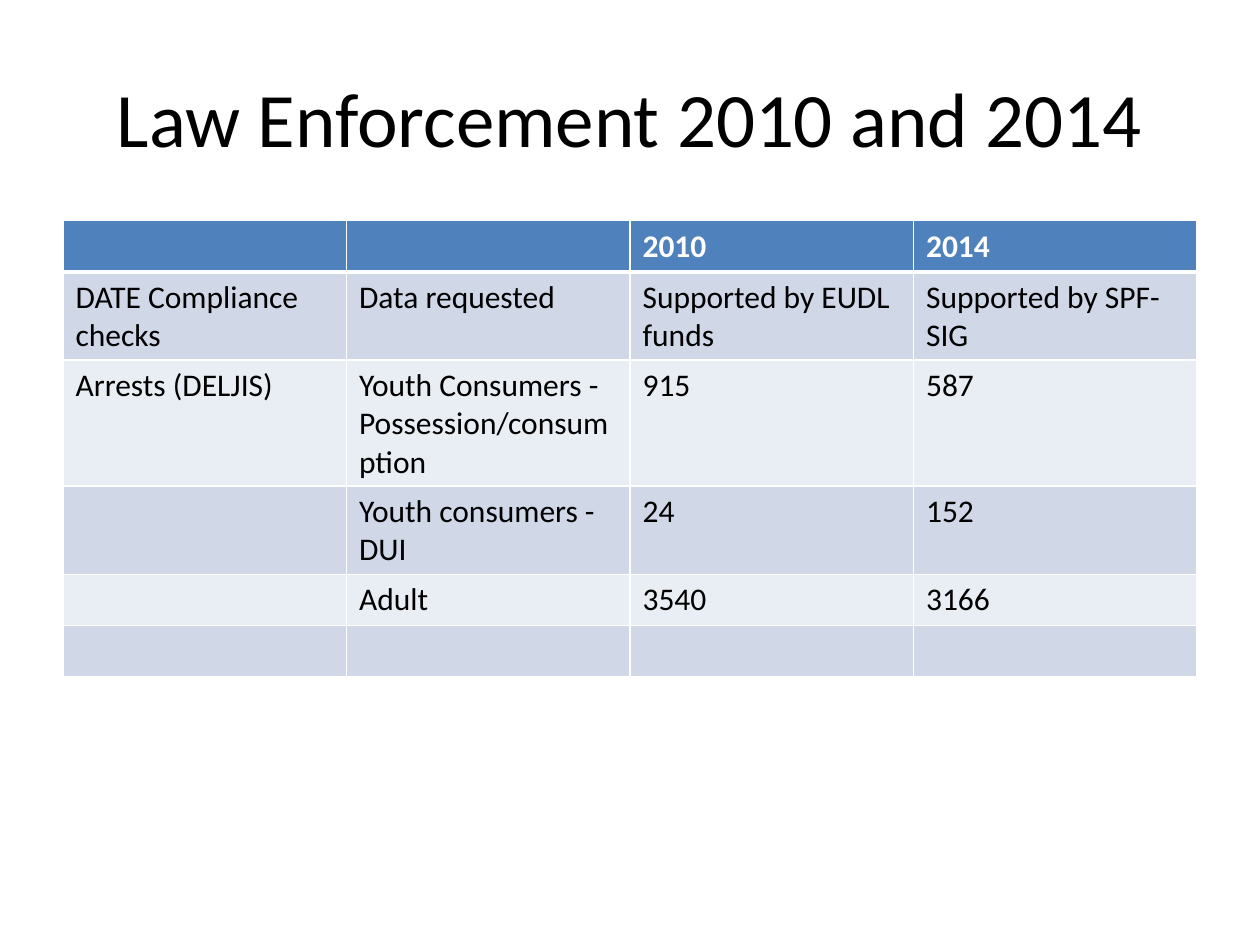
import pptx
import pptx.dml.color
import pptx.enum.text
import pptx.oxml
import pptx.oxml.ns
import pptx.util

Cm = pptx.util.Cm
RGB = pptx.dml.color.RGBColor
BLACK = RGB(0, 0, 0)
WHITE = RGB(255, 255, 255)
BLUE = RGB(0x4F, 0x81, 0xBD)
BANDS = (RGB(0xD0, 0xD8, 0xE8), RGB(0xE9, 0xED, 0xF4))

TITLE = {"name": "Calibri", "size": pptx.util.Pt(44)}
HEAD = {"name": "Calibri", "size": pptx.util.Pt(18), "bold": True}
BODY = {**HEAD, "bold": False}

ROWS = (
    ("", "", "2010", "2014"),
    ("DATE Compliance checks", "Data requested",
     "Supported by EUDL funds", "Supported by SPF-SIG"),
    ("Arrests (DELJIS)", "Youth Consumers - Possession/consumption",
     "915", "587"),
    ("", "Youth consumers - DUI", "24", "152"),
    ("", "Adult", "3540", "3166"),
    ("", "", "", ""),
)


def style(font, look, color):
    """Apply a dict of format values and a colour to a font."""
    for key, value in look.items():
        setattr(font, key, value)
    font.color.rgb = color


def edge(cell, widths):
    """Draw white borders of the given point widths on a cell."""
    props = cell._tc.get_or_add_tcPr()
    for side, width in widths.items():
        props.append(pptx.oxml.parse_xml(
            f'<a:ln{side} {pptx.oxml.ns.nsdecls("a")} '
            f'w="{pptx.util.Pt(width)}"><a:solidFill>'
            f'<a:srgbClr val="{WHITE}"/></a:solidFill></a:ln{side}>'))


def heading(slide, box, text):
    """Place the centred slide title in a box."""
    frame = slide.shapes.add_textbox(*box).text_frame
    frame.word_wrap = True
    frame.vertical_anchor = pptx.enum.text.MSO_ANCHOR.MIDDLE
    para = frame.paragraphs[0]
    para.alignment = pptx.enum.text.PP_ALIGN.CENTER
    para.text = text
    style(para.runs[0].font, TITLE, BLACK)


def grid(slide, box, rows):
    """Place a banded table with a header row in a box."""
    shape = slide.shapes.add_table(len(rows), len(rows[0]), *box)
    table = shape.table
    for r, row in enumerate(rows):
        table.rows[r].height = Cm(1.03)
        for c, text in enumerate(row):
            cell = table.cell(r, c)
            edge(cell, {"L": 1, "R": 1, "T": 3 if r == 1 else 1,
                        "B": 3 if r == 0 else 1})
            cell.fill.solid()
            cell.fill.fore_color.rgb = BANDS[(r - 1) % 2] if r else BLUE
            para = cell.text_frame.paragraphs[0]
            if text:
                para.text = text
                style(para.runs[0].font, BODY if r else HEAD,
                      BLACK if r else WHITE)
    shape.height = box[3]


def main():
    """Build the slide and save it."""
    deck = pptx.Presentation()
    deck.slide_width, deck.slide_height = Cm(25.4), Cm(19.05)
    slide = deck.slides.add_slide(deck.slide_layouts[6])
    left, width = Cm(1.27), Cm(22.86)
    heading(slide, (left, Cm(0.76), width, Cm(3.18)),
            "Law Enforcement 2010 and 2014")
    grid(slide, (left, Cm(4.45), width, Cm(9.2)), ROWS)
    deck.save("out.pptx")


if __name__ == "__main__":
    main()
